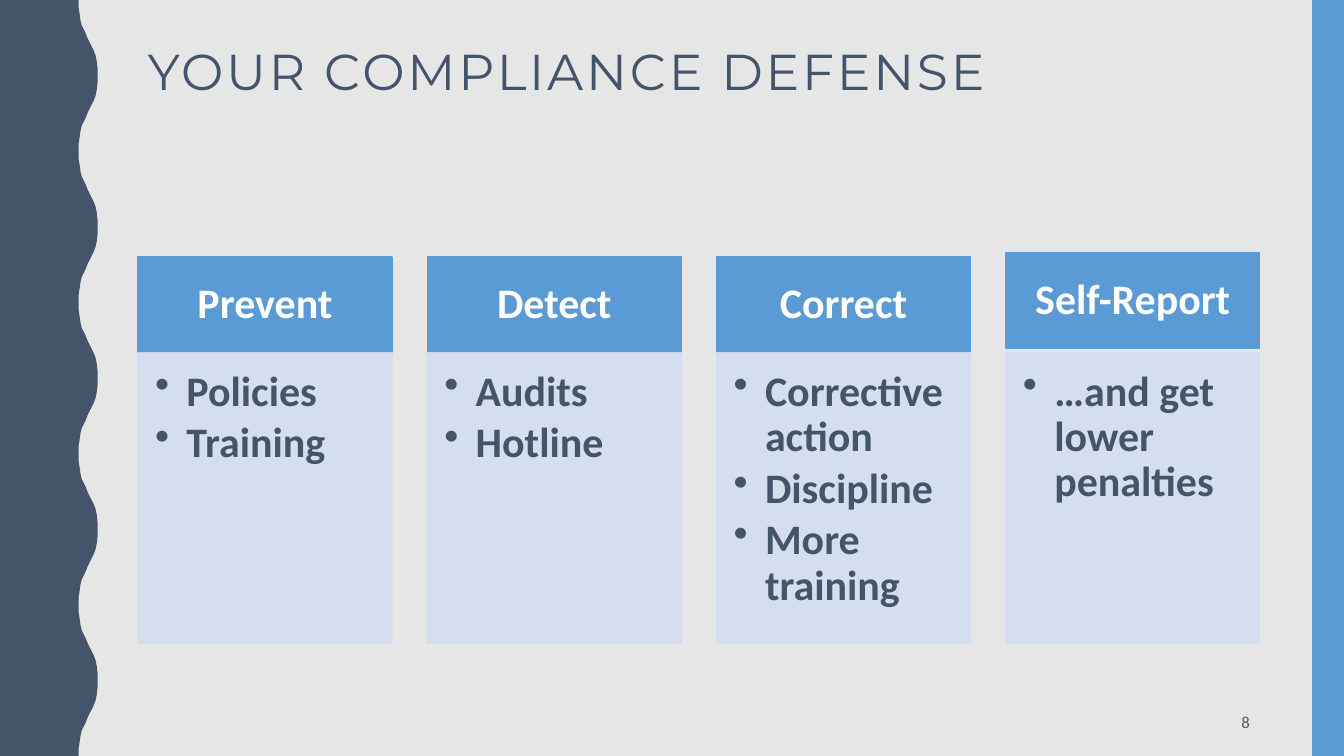
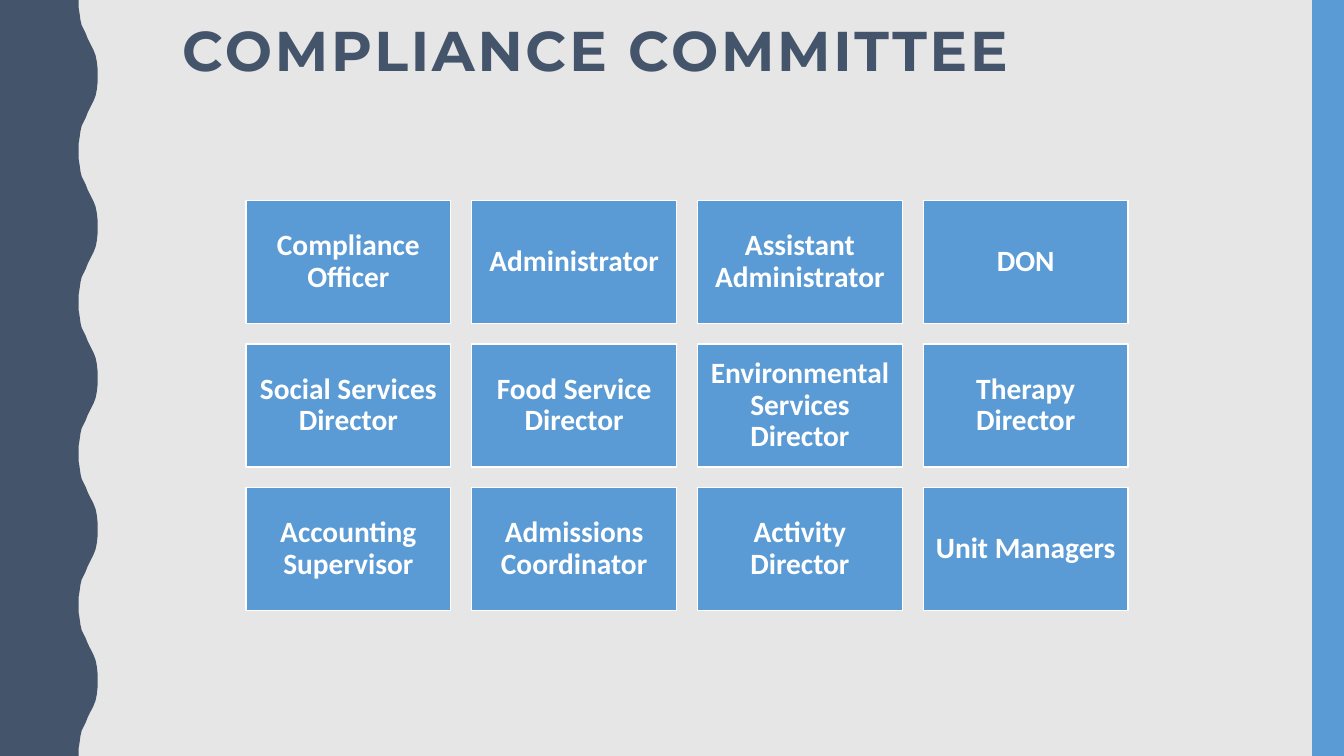
from dataclasses import dataclass

from lxml.etree import SubElement
from pptx import Presentation
from pptx.dml.color import RGBColor as Rgb
from pptx.enum.shapes import MSO_SHAPE as Preset
from pptx.enum.text import MSO_ANCHOR as Anchor, PP_ALIGN as Align
from pptx.oxml.ns import qn
from pptx.util import Cm, Pt


@dataclass(frozen=True)
class Theme:
    background: Rgb = Rgb(0xE7, 0xE6, 0xE6)
    navy: Rgb = Rgb(0x44, 0x54, 0x6A)
    blue: Rgb = Rgb(0x5B, 0x9B, 0xD5)
    pale: Rgb = Rgb(0xD2, 0xDE, 0xEF)
    white: Rgb = Rgb(0xFF, 0xFF, 0xFF)
    grey: Rgb = Rgb(0x59, 0x59, 0x59)
    title_font: str = "Montserrat"
    body_font: str = "Calibri"
    title: Pt = Pt(36)
    large_title: Pt = Pt(40)
    column: Pt = Pt(30)
    member: Pt = Pt(21)
    number: Pt = Pt(12)


theme = Theme()


def margins(left, top, right, bottom):
    return {
        "margin_left": Cm(left),
        "margin_top": Cm(top),
        "margin_right": Cm(right),
        "margin_bottom": Cm(bottom),
    }


title_style = {
    "color": theme.navy,
    "tracking": 200,
    "frame": {"vertical_anchor": Anchor.TOP},
    "paragraph": {"alignment": Align.LEFT, "line_spacing": 0.9},
    "font": {"name": theme.title_font},
}
number_style = {
    "color": theme.grey,
    "frame": {"vertical_anchor": Anchor.MIDDLE},
    "paragraph": {"alignment": Align.RIGHT},
    "font": {"name": theme.body_font, "size": theme.number},
}
heading_style = {
    "fill": theme.blue,
    "line": theme.blue,
    "color": theme.white,
    "frame": {"vertical_anchor": Anchor.MIDDLE, **margins(0.58, 0.33, 0.58, 0.33)},
    "paragraph": {"alignment": Align.CENTER, "line_spacing": 0.9},
    "font": {"name": theme.body_font, "size": theme.column, "bold": True},
}
list_style = {
    "fill": theme.pale,
    "line": theme.pale,
    "alpha": 90000,
    "color": theme.navy,
    "bullet": "•",
    "frame": {"vertical_anchor": Anchor.TOP, **margins(0.43, 0.43, 0.58, 0.66)},
    "paragraph": {"alignment": Align.LEFT, "line_spacing": 0.9, "space_after": Pt(4.5)},
    "font": heading_style["font"],
}
member_style = {
    **heading_style,
    "line": theme.white,
    "frame": {"vertical_anchor": Anchor.MIDDLE, **margins(0.23, 0.23, 0.23, 0.23)},
    "font": {**heading_style["font"], "size": theme.member},
}


def add_block(slide, place, style, lines=()):
    box = [Cm(length) for length in place]
    if "fill" in style:
        shape = slide.shapes.add_shape(Preset.RECTANGLE, *box)
        shape.shadow.inherit = False
        shape.fill.solid()
        shape.fill.fore_color.rgb = style["fill"]
        if "line" in style:
            shape.line.color.rgb = style["line"]
            shape.line.width = Pt(1)
        else:
            shape.line.fill.background()
        if "alpha" in style:
            for color in shape._element.spPr.findall(".//" + qn("a:srgbClr")):
                SubElement(color, qn("a:alpha"), val=str(style["alpha"]))
    else:
        shape = slide.shapes.add_textbox(*box)

    frame = shape.text_frame
    frame.word_wrap = True
    for name, value in style.get("frame", {}).items():
        setattr(frame, name, value)
    for index, line in enumerate(lines):
        paragraph = frame.add_paragraph() if index else frame.paragraphs[0]
        for name, value in style["paragraph"].items():
            setattr(paragraph, name, value)
        if "bullet" in style:
            properties = paragraph._p.get_or_add_pPr()
            properties.set("marL", str(Cm(0.79)))
            properties.set("indent", str(-Cm(0.79)))
            SubElement(properties, qn("a:buChar"), char=style["bullet"])
        run = paragraph.add_run()
        run.text = line
        for name, value in style["font"].items():
            setattr(run.font, name, value)
        run.font.color.rgb = style["color"]
        if "tracking" in style:
            run._r.get_or_add_rPr().set("spc", str(style["tracking"]))


presentation = Presentation()
presentation.slide_width = Cm(33.87)
presentation.slide_height = Cm(19.05)
background = presentation.slide_master.background.fill
background.solid()
background.fore_color.rgb = theme.background

wave_period = 3.81
wave_rise = [
    (1.98, 0), (1.98, 0.18), (2.01, 0.36), (2.03, 0.51), (2.06, 0.64),
    (2.11, 0.74), (2.16, 0.84), (2.21, 0.97), (2.26, 1.07), (2.31, 1.17),
    (2.36, 1.27), (2.41, 1.4), (2.44, 1.55), (2.46, 1.73), (2.46, 1.91),
]
wave_fall = [(x, wave_period - y) for x, y in reversed(wave_rise)]
wave_edge = [
    (Cm(x), Cm(y + cycle * wave_period))
    for cycle in range(5)
    for x, y in wave_rise + wave_fall[1:]
]

titles = [
    ("YOUR COMPLIANCE DEFENSE", (3.48, 1.07, 28.27, 4.14), {"size": theme.title}),
    ("COMPLIANCE COMMITTEE", (4.34, 0.46, 22.78, 4.14), {"size": theme.large_title, "bold": True}),
]
slides = []
for title, place, title_format in titles:
    slide = presentation.slides.add_slide(presentation.slide_layouts[6])
    builder = slide.shapes.build_freeform(0, 0)
    builder.add_line_segments(wave_edge + [(0, Cm(19.05))], close=True)
    wave = builder.convert_to_shape()
    wave.shadow.inherit = False
    wave.fill.solid()
    wave.fill.fore_color.rgb = theme.navy
    wave.line.fill.background()
    add_block(slide, (33.07, 0, 0.8, 19.05), {"fill": theme.blue})
    style = {**title_style, "font": {**title_style["font"], **title_format}}
    add_block(slide, place, style, [title])
    slides.append(slide)

defense_slide, committee_slide = slides

defenses = [
    ("Prevent", 6.48, ["Policies", "Training"]),
    ("Detect", 6.48, ["Audits", "Hotline"]),
    ("Correct", 6.48, ["Corrective action", "Discipline", "More training"]),
    ("Self-Report", 6.38, ["…and get lower penalties"]),
]
for column, (heading, top, items) in enumerate(defenses):
    left = 3.48 + column * 7.29
    add_block(defense_slide, (left, top, 6.4, 2.39), heading_style, [heading])
    add_block(defense_slide, (left, 8.89, 6.4, 7.32), list_style, items)
add_block(defense_slide, (23.93, 17.7, 7.82, 0.97), number_style, ["8"])

members = [
    "Compliance Officer", "Administrator", "Assistant Administrator", "DON",
    "Social Services Director", "Food Service Director",
    "Environmental Services Director", "Therapy Director",
    "Accounting Supervisor", "Admissions Coordinator", "Activity Director",
    "Unit Managers",
]
for index, member in enumerate(members):
    row, column = divmod(index, 4)
    place = (6.2 + column * 5.69, 5.05 + row * 3.62, 5.16, 3.1)
    add_block(committee_slide, place, member_style, [member])

presentation.save("out.pptx")
